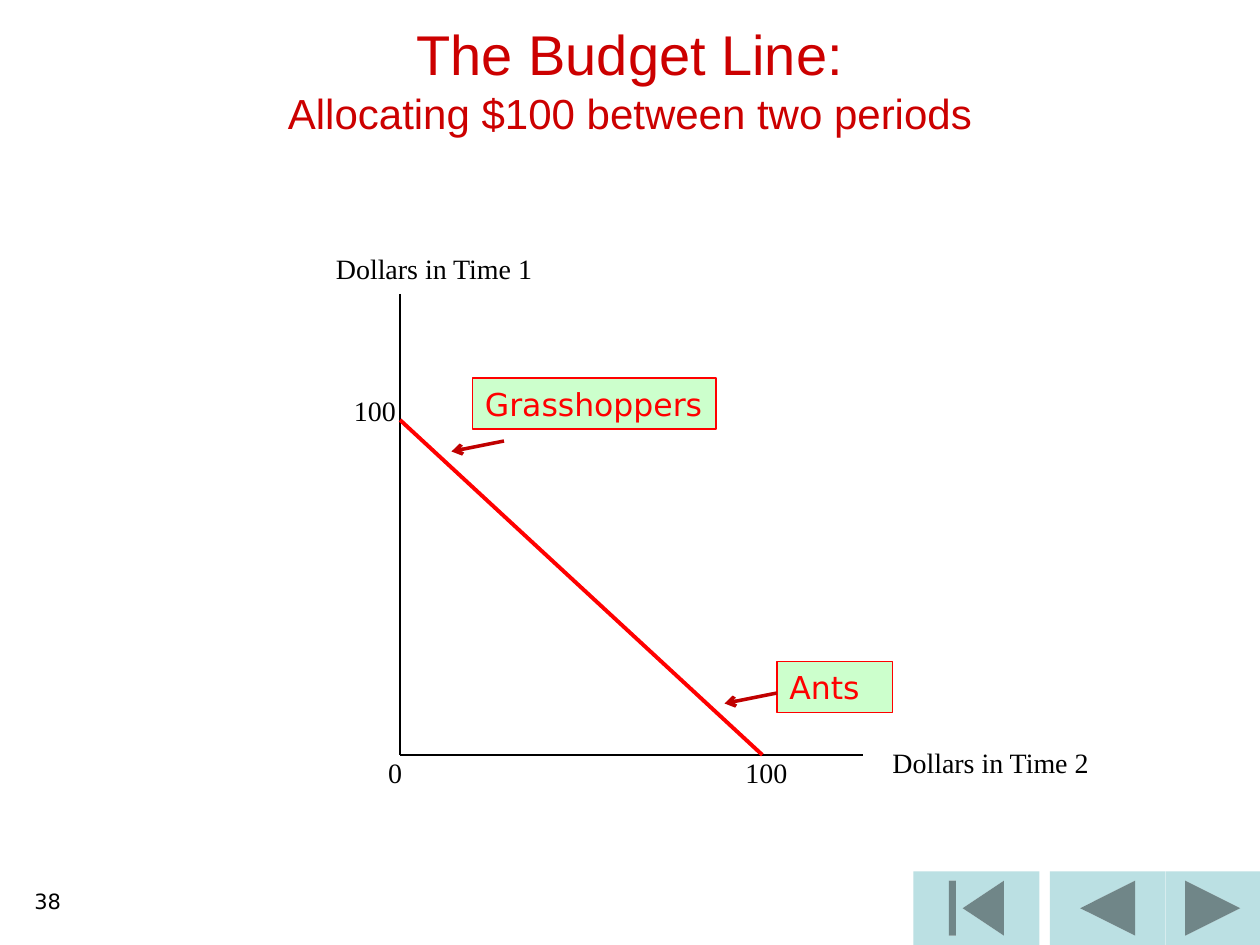
import pptx
import pptx.util
import pptx.dml.color
import pptx.enum.shapes
import pptx.enum.text
import pptx.oxml.ns
import lxml.etree

SHAPE = pptx.enum.shapes.MSO_SHAPE
ALIGN = pptx.enum.text.PP_ALIGN
ANCHOR = pptx.enum.text.MSO_ANCHOR
LEFT, CENTER, RIGHT = ALIGN.LEFT, ALIGN.CENTER, ALIGN.RIGHT

THEME = {
    "title": "CC0000", "ink": "000000", "budget": "FF0000",
    "arrow": "C00000", "tag": "CCFFCC", "button": "BBE0E3",
    "title_font": "Arial", "label_font": "Times New Roman", "tag_font": "DejaVu Sans",
    "title_size": 32, "subtitle_size": 24, "label_size": 16, "tag_size": 18, "number_size": 12,
}

deck = pptx.Presentation()
deck.slide_width = pptx.util.Inches(10)
deck.slide_height = pptx.util.Inches(7.5)
page = deck.slides.add_slide(deck.slide_layouts[6])

# Square grid: 120 columns by 90 rows
UNIT = deck.slide_width / 120


def write(box, text, font, size, color, align=LEFT, inset=True):
    frame = box.text_frame
    frame.word_wrap = True
    frame.text = text
    if not inset:
        frame.margin_left = frame.margin_right = frame.margin_top = frame.margin_bottom = 0
    para = frame.paragraphs[0]
    para.alignment = align
    for span in para.runs:
        span.font.name = THEME[font]
        span.font.size = pptx.util.Pt(THEME[size])
        span.font.color.rgb = pptx.dml.color.RGBColor.from_string(THEME[color])
    return para


def draw_line(start, end, color, width, arrow=False):
    points = [round(value * UNIT) for value in (*start, *end)]
    line = page.shapes.add_connector(pptx.enum.shapes.MSO_CONNECTOR.STRAIGHT, *points)
    line.line.color.rgb = pptx.dml.color.RGBColor.from_string(THEME[color])
    line.line.width = pptx.util.Pt(width)
    if arrow:
        tail = lxml.etree.SubElement(line.line._get_or_add_ln(), pptx.oxml.ns.qn("a:tailEnd"))
        tail.set("type", "arrow")
    lxml.etree.SubElement(line._element.spPr, pptx.oxml.ns.qn("a:effectLst"))


# Navigation buttons
for kind, column, width in [
    (SHAPE.ACTION_BUTTON_BACK_OR_PREVIOUS, 100, 11),
    (SHAPE.ACTION_BUTTON_BEGINNING, 87, 12),
    (SHAPE.ACTION_BUTTON_FORWARD_OR_NEXT, 111, 9),
]:
    button = page.shapes.add_shape(
        kind, *[round(value * UNIT) for value in (column, 83, width, 7)])
    button.shadow.inherit = False
    button.fill.solid()
    button.fill.fore_color.rgb = pptx.dml.color.RGBColor.from_string(THEME["button"])
    button.line.fill.background()

# Page number
number = page.shapes.add_textbox(*[round(value * UNIT) for value in (0, 84, 7, 6)])
write(number, "38", "tag_font", "number_size", "ink", RIGHT)

# Title with a smaller second line
title = page.shapes.add_textbox(0, 0, deck.slide_width, round(15 * UNIT))
title.text_frame.vertical_anchor = ANCHOR.MIDDLE
heading = write(title, "The Budget Line:\vAllocating $100 between two periods",
                "title_font", "title_size", "title", CENTER)
heading.runs[1].font.size = pptx.util.Pt(THEME["subtitle_size"])

# Axis names and values
for text, column, row, width, align in [
    ("Dollars in Time 1", 32, 24, 19, LEFT),
    ("100", 32, 37.5, 5.7, RIGHT),
    ("0", 32, 72, 6.3, RIGHT),
    ("100", 71, 72, 6, LEFT),
    ("Dollars in Time 2", 85, 71, 19, LEFT),
]:
    label = page.shapes.add_textbox(
        *[round(value * UNIT) for value in (column, row, width, 3.2)])
    write(label, text, "label_font", "label_size", "ink", align, inset=False)

# Axes and budget line
origin = (38.1, 71.9)
draw_line((38.1, 28), origin, "ink", 0.88)
draw_line(origin, (82.2, 71.9), "ink", 0.88)
draw_line((38.1, 40), (72.6, 71.9), "budget", 2.25)

# Tags, each with an arrow to the budget line
for text, column, row, width, start in [
    ("Grasshoppers", 45, 36, 23.2, (48, 42)),
    ("Ants", 74, 63, 11, (74, 66)),
]:
    tag = page.shapes.add_shape(
        SHAPE.RECTANGLE, *[round(value * UNIT) for value in (column, row, width, 4.85)])
    tag.shadow.inherit = False
    tag.fill.solid()
    tag.fill.fore_color.rgb = pptx.dml.color.RGBColor.from_string(THEME["tag"])
    tag.line.color.rgb = pptx.dml.color.RGBColor.from_string(THEME["budget"])
    tag.line.width = pptx.util.Pt(0.75)
    write(tag, text, "tag_font", "tag_size", "budget")
    draw_line(start, (start[0] - 5, start[1] + 1), "arrow", 2, arrow=True)

deck.save("out.pptx")
